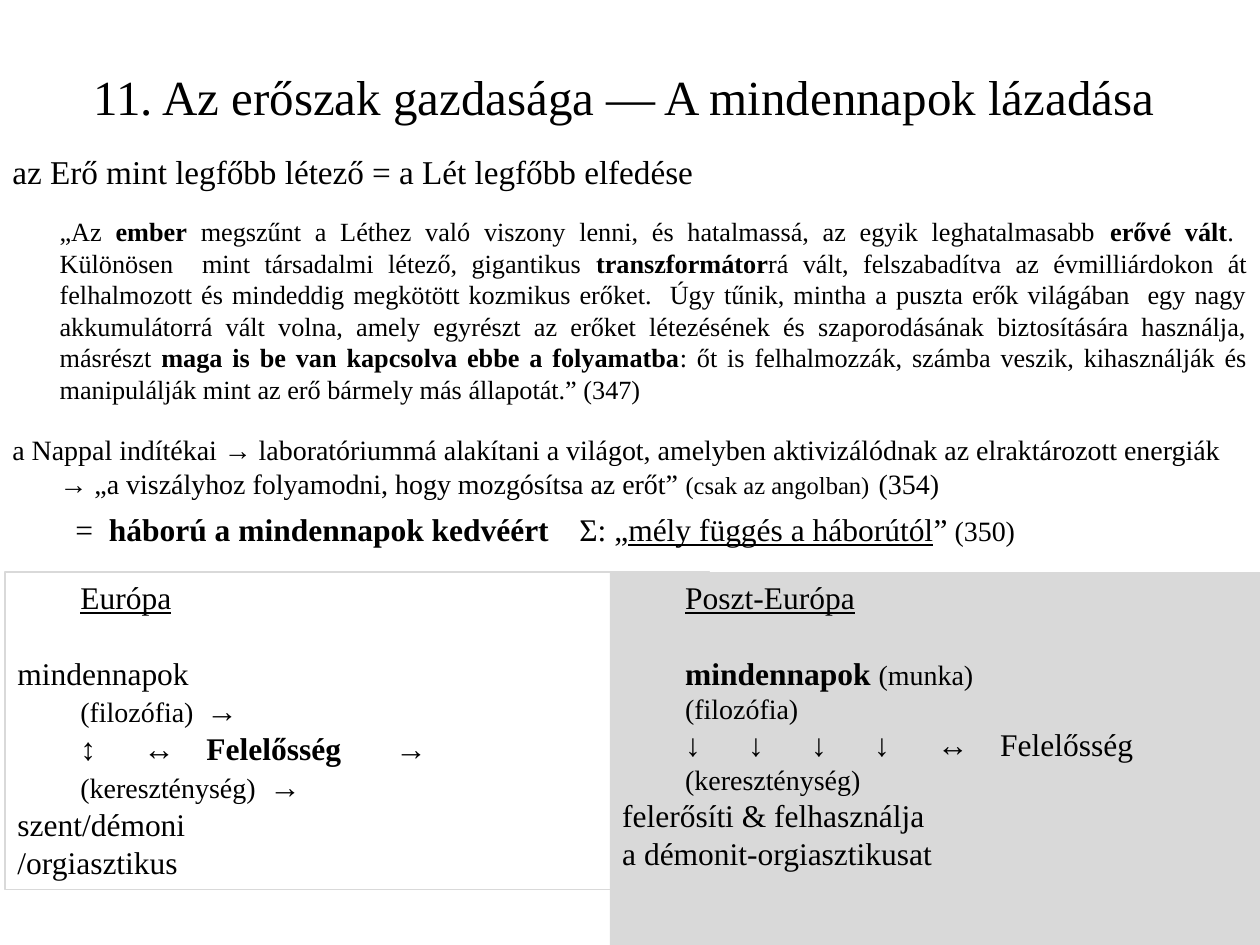
from lxml import etree
from pptx import Presentation
from pptx import util as u
from pptx.dml.color import RGBColor
from pptx.enum import shapes, text
from pptx.oxml.ns import qn

Pt = u.Pt
HUES = {"ink": "000000", "grey": "D9D9D9"}
FONT = "Times New Roman"


class Deck:
    """Holds the style and the current slide."""

    def __init__(self):
        self.prs = Presentation()
        self.prs.slide_width, self.prs.slide_height = Pt(720), Pt(540)
        self.slide = self.prs.slides.add_slide(self.prs.slide_layouts[6])

    def hue(self, name):
        return RGBColor.from_string(HUES[name])

    def setup(self, shape, anchor):
        frame = shape.text_frame
        frame.word_wrap = True
        frame.vertical_anchor = anchor
        return frame

    def box(self, x, y, w, h, anchor=text.MSO_ANCHOR.TOP):
        shape = self.slide.shapes.add_textbox(Pt(x), Pt(y), Pt(w), Pt(h))
        return self.setup(shape, anchor)

    def panel(self, x, y, w, h, fill=None, line=None):
        shape = self.slide.shapes.add_shape(
            shapes.MSO_SHAPE.RECTANGLE, Pt(x), Pt(y), Pt(w), Pt(h))
        shape.shadow.inherit = False
        if fill:
            shape.fill.solid()
            shape.fill.fore_color.rgb = self.hue(fill)
        else:
            shape.fill.background()
        if line:
            shape.line.color.rgb = self.hue(line)
            shape.line.width = Pt(0.75)
        else:
            shape.line.fill.background()
        return self.setup(shape, text.MSO_ANCHOR.TOP)

    def para(self, frame, runs, size=18, before=0, align="LEFT", left=0,
             first=0, tabs=(), pitch=None):
        """Add a paragraph; a run is a string or (string, marks, size)."""
        p = frame.paragraphs[0]
        if p.runs:
            p = frame.add_paragraph()
        p.alignment = getattr(text.PP_ALIGN, align)
        p.space_before = Pt(before)
        if pitch:
            p.line_spacing = Pt(pitch)
        props = p._p.get_or_add_pPr()
        props.set("marL", str(Pt(left)))
        props.set("indent", str(Pt(first)))
        if tabs:
            stops = etree.SubElement(props, qn("a:tabLst"))
            for stop in tabs:
                etree.SubElement(stops, qn("a:tab"), pos=str(Pt(stop)), algn="l")
        p.font.name, p.font.size = FONT, Pt(size)
        p.font.color.rgb = self.hue("ink")
        for item in runs:
            words, marks, own = item if isinstance(item, tuple) else (item, "", size)
            run = p.add_run()
            run.text = words
            if "b" in marks:
                run.font.bold = True
            if "u" in marks:
                run.font.underline = True
            if own != size:
                run.font.size = Pt(own)


def main():
    deck = Deck()

    # Title
    head = deck.box(36, 21.6, 648, 67, text.MSO_ANCHOR.MIDDLE)
    deck.para(head, ["11. Az erőszak gazdasága ― A mindennapok lázadása "],
              28, align="CENTER")

    # Body with the quotation
    body = deck.box(0, 82.8, 720, 240)
    deck.para(body, ["az Erő mint legfőbb létező = a Lét legfőbb elfedése"],
              19, before=2.4)
    deck.para(body, [
        "„Az ", ("ember", "b", 15),
        " megszűnt a Léthez való viszony lenni, és hatalmassá, az egyik "
        "leghatalmasabb ", ("erővé vált", "b", 15),
        ".  Különösen  mint társadalmi létező, gigantikus ",
        ("transzformátor", "b", 15),
        "rá vált, felszabadítva az évmilliárdokon át felhalmozott és mindeddig "
        "megkötött kozmikus erőket.  Úgy tűnik, mintha a puszta erők világában  "
        "egy nagy akkumulátorrá vált volna, amely egyrészt az erőket létezésének "
        "és szaporodásának biztosítására használja, másrészt ",
        ("maga is be van kapcsolva ebbe a folyamatba", "b", 15),
        ": őt is felhalmozzák, számba veszik, kihasználják és manipulálják mint "
        "az erő bármely más állapotát.” (347)"],
        15, before=14, align="JUSTIFY", left=27, pitch=18)
    deck.para(body, [
        "a Nappal indítékai → laboratóriummá alakítani a világot, amelyben "
        "aktivizálódnak az elraktározott energiák  → „a viszályhoz folyamodni, "
        "hogy mozgósítsa az erőt” ", ("(csak az angolban)", "", 14), "\t(354)"],
        16, before=16.5, left=27, first=-27, tabs=[619.7], pitch=19)
    deck.para(body, [
        "\t=  ", ("háború a mindennapok kedvéért", "b", 18), "\tƩ: „",
        ("mély függés a háborútól", "u", 18), "”", (" (350)", "", 16)],
        before=5.6, tabs=[27, 315.7])

    # Left panel: Europe
    west = deck.panel(2.9, 326.9, 402.5, 181.4, line="grey")
    deck.para(west, ["\t", ("Európa", "u", 18)], tabs=[135])
    deck.para(west, ["mindennapok"], before=21.5)
    deck.para(west, [("\t(filozófia)", "", 16), "\t→"], tabs=[27.6, 147])
    deck.para(west, ["\t↕\t↔\t", ("Felelősség", "b", 18), "\t→"],
              tabs=[40.2, 123, 152.8, 291])
    deck.para(west, [("\t(kereszténység)", "", 16), "\t→"], tabs=[171.6, 291])
    for words in ("szent/démoni", "/orgiasztikus"):
        deck.para(west, [words])

    # Right panel: Post-Europe
    post = deck.panel(348.5, 326.9, 371.5, 220.3, fill="grey")
    deck.para(post, ["\t", ("Poszt-Európa", "u", 18)], tabs=[144.3])
    deck.para(post, ["\t", ("mindennapok ", "b", 18), ("(munka)", "", 16)],
              before=21.5, tabs=[4.9])
    deck.para(post, ["\t(filozófia)"], 16, tabs=[239.7])
    downs = [14.6 + 26.85 * i for i in range(4)]
    deck.para(post, ["\t↓" * 4 + "\t↔\tFelelősség"], tabs=downs + [155.7, 207.1])
    deck.para(post, ["\t(kereszténység)"], 16, tabs=[239.7])
    for words in ("felerősíti & felhasználja", "a démonit-orgiasztikusat"):
        deck.para(post, [words])

    deck.prs.save("out.pptx")


if __name__ == "__main__":
    main()
